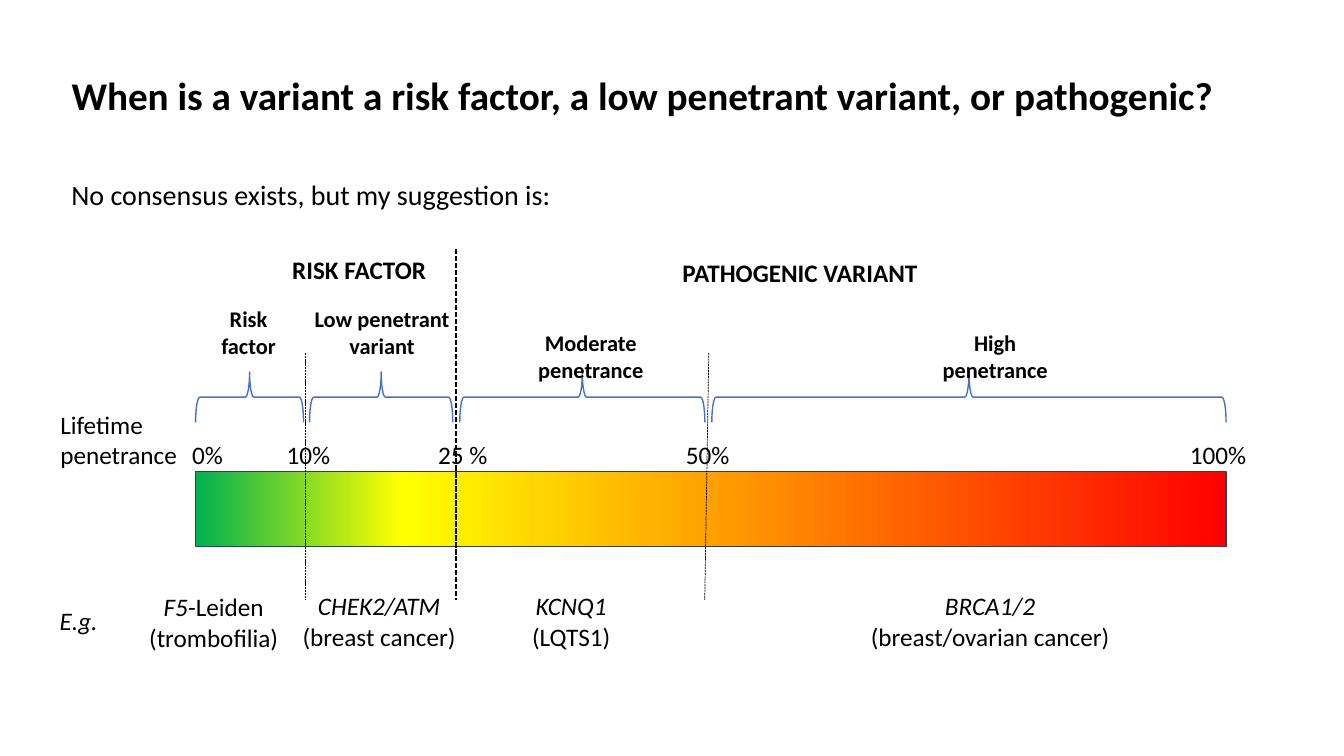
"""Build a slide that places variant classes on a lifetime penetrance scale."""
import copy
from dataclasses import dataclass

import lxml.etree
import pptx
import pptx.dml.color
import pptx.enum.dml
import pptx.enum.shapes
import pptx.enum.text
import pptx.oxml.ns
import pptx.slide
import pptx.text.text
import pptx.util

Inches = pptx.util.Inches
Align = pptx.enum.text.PP_ALIGN

FONT = "Calibri"
BLACK = "000000"
BRACE_BLUE = "4472C4"
BAR_OUTLINE = "28445D"
SCALE_STOPS = ((0, "FF0000"), (0.8, "FFFF00"), (1, "00B050"))
BRACE_CENTER_Y = 3.94
BRACE_DEPTH = 0.5
DIVIDER_BOTTOM = 5.95


@dataclass(frozen=True)
class Label:
    text: str
    left: float
    top: float
    width: float
    height: float = 0.4
    size: float = 18
    bold: bool = False
    italic: bool = False
    align: Align = Align.CENTER


@dataclass(frozen=True)
class Example:
    gene: str
    suffix: str
    condition: str
    left: float
    top: float
    width: float


@dataclass(frozen=True)
class Brace:
    start: float
    end: float


@dataclass(frozen=True)
class Divider:
    top_x: float
    bottom_x: float
    top: float = 3.5
    weight: float = 0.5


@dataclass(frozen=True)
class Tick:
    text: str
    center: float


LABELS = (
    Label("Lifetime\npenetrance", 0.5, 4.01, 1.4, 0.71, align=Align.LEFT),
    Label("Moderate penetrance", 4.76, 3.22, 2.2, 0.37, 16, bold=True),
    Label("High penetrance", 9.02, 3.22, 1.7, 0.37, 16, bold=True),
    Label("Risk\vfactor", 2.09, 2.98, 0.75, 0.64, 16, bold=True),
    Label("Low penetrant\vvariant", 3.01, 2.98, 1.56, 0.64, 16, bold=True),
    Label("No consensus exists, but my suggestion is:", 0.61, 1.71, 5, 0.44, 20,
          align=Align.LEFT),
    Label("RISK FACTOR", 2.8, 2.47, 1.6, bold=True, align=Align.LEFT),
    Label("PATHOGENIC VARIANT", 6.67, 2.5, 2.56, bold=True, align=Align.LEFT),
    Label("E.g.", 0.49, 5.96, 0.58, italic=True),
)
TICKS = (Tick("0%", 2.06), Tick("10%", 3.06), Tick("25 %", 4.59),
         Tick("50%", 7.02), Tick("100%", 12.08))
EXAMPLES = (
    Example("F5", "-Leiden", "(trombofilia)", 1.37, 5.82, 1.5),
    Example("CHEK2/ATM", "", "(breast cancer)", 2.89, 5.81, 1.74),
    Example("KCNQ1", "", "(LQTS1)", 5.17, 5.81, 0.99),
    Example("BRCA1/2", "", "(breast/ovarian cancer)", 8.52, 5.81, 2.6),
)
BRACES = (Brace(1.94, 3.01), Brace(3.07, 4.49), Brace(4.56, 6.99), Brace(7.06, 12.16))
DIVIDERS = (Divider(3.03, 3.03), Divider(4.52, 4.52, 2.47, 1.25), Divider(7.03, 6.99))


def rgb(code: str) -> pptx.dml.color.RGBColor:
    """Turn a hex string into a colour."""
    return pptx.dml.color.RGBColor.from_string(code)


def style(paragraph: pptx.text.text._Paragraph, size: float, align: Align,
          bold: bool = False, italic: bool | None = False) -> None:
    """Set the font and alignment of a paragraph."""
    paragraph.alignment = align
    font = paragraph.font
    font.name, font.size, font.bold, font.italic = FONT, pptx.util.Pt(size), bold, italic
    font.color.rgb = rgb(BLACK)


def add_title(slide: pptx.slide.Slide, text: str) -> None:
    """Place and format the title placeholder."""
    title = slide.shapes.title
    title.left, title.top = Inches(0.61), Inches(0.66)
    title.width, title.height = Inches(12.4), Inches(0.57)
    frame = title.text_frame
    frame.text = text
    frame.auto_size = pptx.enum.text.MSO_AUTO_SIZE.NONE
    frame.vertical_anchor = pptx.enum.text.MSO_ANCHOR.MIDDLE
    style(frame.paragraphs[0], 28, Align.LEFT, bold=True)


def add_text_frame(slide: pptx.slide.Slide, left: float, top: float,
                   width: float, height: float) -> pptx.text.text.TextFrame:
    """Add an unwrapped text box and return its text frame."""
    frame = slide.shapes.add_textbox(
        Inches(left), Inches(top), Inches(width), Inches(height)).text_frame
    frame.word_wrap = False
    return frame


def add_label(slide: pptx.slide.Slide, label: Label) -> None:
    """Add a text label."""
    frame = add_text_frame(slide, label.left, label.top, label.width, label.height)
    frame.text = label.text
    for paragraph in frame.paragraphs:
        style(paragraph, label.size, label.align, label.bold, label.italic)


def add_example(slide: pptx.slide.Slide, example: Example) -> None:
    """Add a gene in italics above its condition."""
    frame = add_text_frame(slide, example.left, example.top, example.width, 0.71)
    gene_line, condition_line = frame.paragraphs[0], frame.add_paragraph()
    style(gene_line, 18, Align.CENTER, italic=None)
    style(condition_line, 18, Align.CENTER)
    gene = gene_line.add_run()
    gene.text = example.gene
    gene.font.italic = True
    if example.suffix:
        gene_line.add_run().text = example.suffix
    condition_line.text = example.condition


def add_scale(slide: pptx.slide.Slide) -> None:
    """Add the bar that runs from green to red."""
    scale = slide.shapes.add_shape(
        pptx.enum.shapes.MSO_SHAPE.RECTANGLE,
        Inches(1.94), Inches(4.68), Inches(10.22), Inches(0.74))
    scale.shadow.inherit = False
    scale.line.color.rgb = rgb(BAR_OUTLINE)
    scale.line.width = pptx.util.Pt(1)
    scale.fill.gradient()
    scale.fill.gradient_angle = 180
    stop_list = scale.element.spPr.find(".//" + pptx.oxml.ns.qn("a:gsLst"))
    stop_list.append(copy.deepcopy(stop_list[-1]))
    for stop, (position, code) in zip(scale.fill.gradient_stops, SCALE_STOPS):
        stop.position = position
        stop.color.rgb = rgb(code)


def add_brace(slide: pptx.slide.Slide, brace: Brace) -> None:
    """Add a brace that points up over a span of the scale."""
    span = brace.end - brace.start
    center = (brace.start + brace.end) / 2
    shape = slide.shapes.add_shape(
        pptx.enum.shapes.MSO_SHAPE.LEFT_BRACE,
        Inches(center - BRACE_DEPTH / 2), Inches(BRACE_CENTER_Y - span / 2),
        Inches(BRACE_DEPTH), Inches(span))
    shape.rotation = 90
    shape.shadow.inherit = False
    shape.fill.background()
    shape.line.color.rgb = rgb(BRACE_BLUE)
    shape.line.width = pptx.util.Pt(1)


def add_divider(slide: pptx.slide.Slide, divider: Divider) -> None:
    """Add a dashed line between two classes."""
    line = slide.shapes.add_connector(
        pptx.enum.shapes.MSO_CONNECTOR.STRAIGHT,
        Inches(divider.top_x), Inches(divider.top),
        Inches(divider.bottom_x), Inches(DIVIDER_BOTTOM))
    line.line.color.rgb = rgb(BLACK)
    line.line.width = pptx.util.Pt(divider.weight)
    line.line.dash_style = pptx.enum.dml.MSO_LINE.SQUARE_DOT
    lxml.etree.SubElement(line.element.spPr, pptx.oxml.ns.qn("a:effectLst"))


def main() -> None:
    """Build and save the slide."""
    deck = pptx.Presentation()
    deck.slide_width, deck.slide_height = Inches(13.33), Inches(7.5)
    slide = deck.slides.add_slide(deck.slide_layouts.get_by_name("Title Only"))
    add_title(slide, "When is a variant a risk factor, a low penetrant variant, or pathogenic?")
    add_scale(slide)
    for brace in BRACES:
        add_brace(slide, brace)
    for divider in DIVIDERS:
        add_divider(slide, divider)
    for tick in TICKS:
        add_label(slide, Label(tick.text, tick.center - 0.4, 4.31, 0.8))
    for label in LABELS:
        add_label(slide, label)
    for example in EXAMPLES:
        add_example(slide, example)
    deck.save("out.pptx")


if __name__ == "__main__":
    main()
